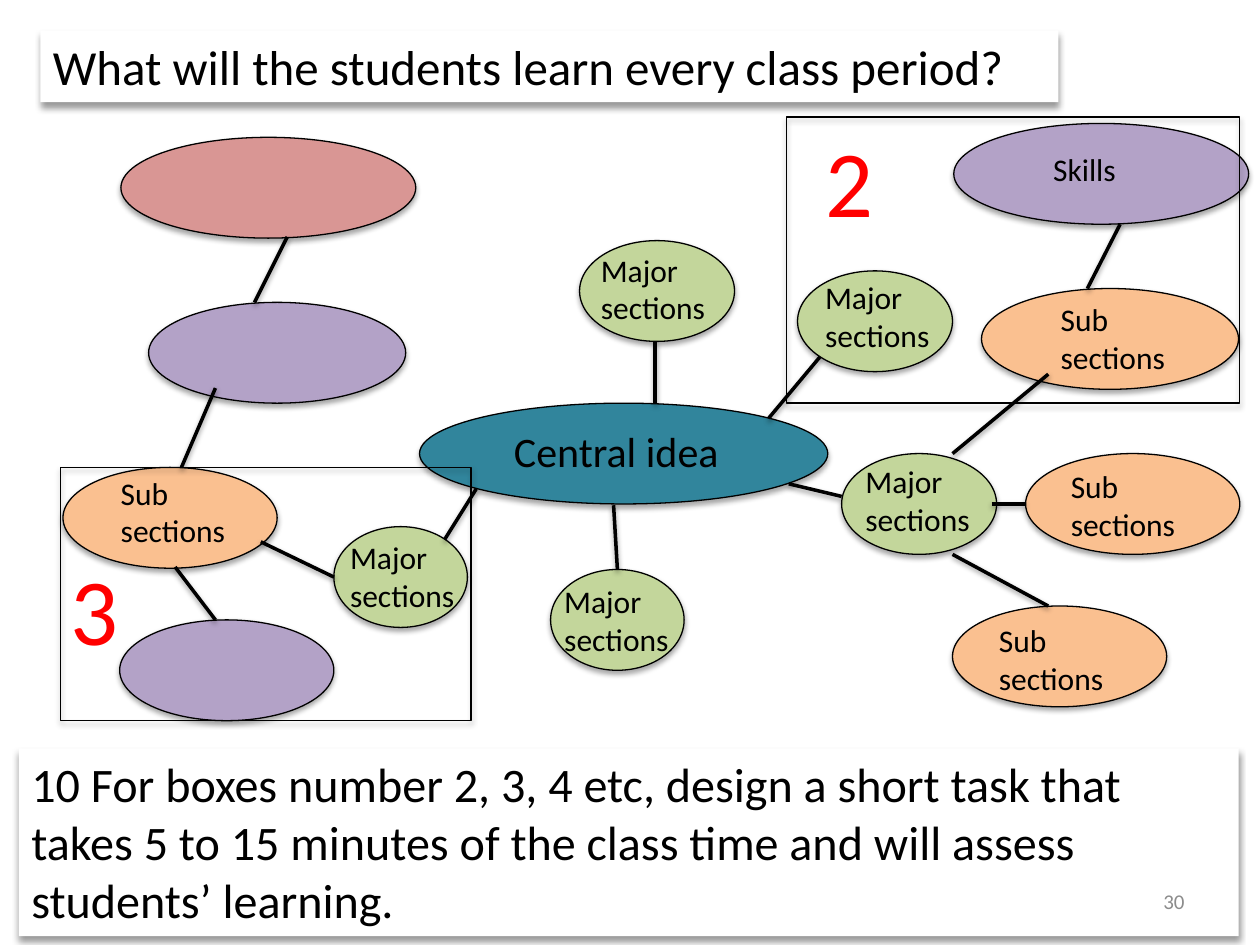
"""Build the concept map slide on what students learn every class period."""
from lxml import etree
from pptx import Presentation
from pptx.dml.color import RGBColor
from pptx.enum.shapes import MSO_CONNECTOR, MSO_SHAPE
from pptx.enum.text import MSO_ANCHOR, MSO_AUTO_SIZE, PP_ALIGN
from pptx.oxml.ns import qn
from pptx.util import Inches, Pt

OVAL, RECT = MSO_SHAPE.OVAL, MSO_SHAPE.RECTANGLE
LINE = MSO_CONNECTOR.STRAIGHT
TOP, MIDDLE = MSO_ANCHOR.TOP, MSO_ANCHOR.MIDDLE
LEFT, RIGHT = PP_ALIGN.LEFT, PP_ALIGN.RIGHT
FIXED = MSO_AUTO_SIZE.NONE

FONT = "Calibri"
COLORS = {
    "teal": "31859C", "green": "C3D69B", "orange": "FAC090",
    "purple": "B3A2C7", "rose": "D99694", "white": "FFFFFF",
    "black": "000000", "red": "FF0000", "gray": "8C8C8C",
}
# Shadows: opacity in percent, blur and distance in points.
SHADOWS = {"shape": (35, 3.1, 1.8), "panel": (40, 4, 3), "link": (38, 3.1, 1.6)}

TITLE = "What will the students learn every class period?"
NOTE = ("10 For boxes number 2, 3, 4 etc, design a short task that takes 5 to 15 "
        "minutes of the class time and will assess students’ learning.")
TITLE_AT = (0.32, 0.24, 8.08, 0.57)
NOTE_AT = (0.15, 5.94, 9.68, 1.49)

OVAL_H = 0.8
OVALS = {
    "teal": [(3.33, 3.2, 3.24)],
    "green": [(6.33, 2.15, 1.23), (6.68, 3.6, 1.23), (4.6, 1.91, 1.23),
              (4.37, 4.52, 1.06), (2.65, 4.18, 1.06)],
    "orange": [(8.14, 3.6, 1.7), (7.79, 2.29, 2.04), (7.56, 4.81, 1.7),
               (0.5, 3.71, 1.7)],
    "purple": [(7.57, 0.98, 2.34), (1.18, 2.4, 2.04), (0.95, 4.92, 1.7)],
    "rose": [(0.96, 1.09, 2.34)],
}
LINKS = [
    (6.1, 3.32, 6.51, 2.83), (7.87, 4, 8.14, 4), (7.56, 3.6, 8.32, 2.97),
    (7.56, 4.4, 8.32, 4.81), (8.89, 1.78, 8.63, 2.29), (3.53, 4.28, 3.78, 3.88),
    (4.87, 4.01, 4.9, 4.52), (1.44, 3.71, 1.71, 3.08), (1.39, 4.5, 1.71, 4.92),
    (2.28, 1.88, 2.02, 2.4), (6.26, 3.84, 6.68, 3.94), (5.2, 3.2, 5.2, 2.71),
    (2.07, 4.3, 2.65, 4.58),
]
LABEL_W = 1.06
LABELS = [
    (["Major sections"], 0.71, [(4.38, 4.57), (6.77, 3.62), (2.68, 4.22),
                                (6.45, 2.16), (4.67, 1.94)]),
    (["Sub", "sections"], 0.71, [(8.4, 3.66), (0.86, 3.71), (8.32, 2.33),
                                 (7.83, 4.88)]),
    (["Skills"], 0.4, [(8.26, 1.14)]),
]
FRAMES = [
    ((6.24, 0.93, 3.6, 2.27), "2", (6.45, 0.93, 0.8, 1.01)),
    ((0.48, 3.71, 3.26, 2.01), "3", (0.46, 4.32, 0.72, 1.01)),
]


def rgb(name):
    return RGBColor.from_string(COLORS[name])


def inches(spot):
    return [Inches(n) for n in spot]


def shade(item, kind):
    alpha, blur, dist = SHADOWS[kind]
    group = etree.SubElement(item._element.spPr, qn("a:effectLst"))
    drop = etree.SubElement(group, qn("a:outerShdw"), blurRad=str(Pt(blur)),
                            dist=str(Pt(dist)), dir="5400000", rotWithShape="0")
    tint = etree.SubElement(drop, qn("a:srgbClr"), val=COLORS["black"])
    etree.SubElement(tint, qn("a:alpha"), val=str(alpha * 1000))


def write(item, lines, size, color="black", align=LEFT, anchor=TOP):
    frame = item.text_frame
    frame.word_wrap = True
    frame.auto_size = FIXED
    frame.vertical_anchor = anchor
    for i, line in enumerate(lines):
        para = frame.add_paragraph() if i else frame.paragraphs[0]
        para.alignment = align
        run = para.add_run()
        run.text = line
        run.font.name = FONT
        run.font.size = Pt(size)
        run.font.color.rgb = rgb(color)


def label(slide, spot, *args, **style):
    write(slide.shapes.add_textbox(*inches(spot)), *args, **style)


def panel(item):
    item.fill.solid()
    item.fill.fore_color.rgb = rgb("white")
    item.line.fill.background()
    shade(item, "panel")


def outline(slide, kind, spot, fill=None):
    item = slide.shapes.add_shape(kind, *inches(spot))
    if fill:
        item.fill.solid()
        item.fill.fore_color.rgb = rgb(fill)
    else:
        item.fill.background()
    item.line.color.rgb = rgb("black")
    item.line.width = Pt(0.75)
    shade(item, "shape")


def link(slide, ends):
    item = slide.shapes.add_connector(LINE, *inches(ends))
    item.line.color.rgb = rgb("black")
    item.line.width = Pt(2)
    shade(item, "link")


def main():
    deck = Presentation()
    deck.slide_width, deck.slide_height = Inches(10), Inches(7.5)
    slide = deck.slides.add_slide(deck.slide_layouts[5])

    title = slide.shapes.title
    title.left, title.top, title.width, title.height = inches(TITLE_AT)
    panel(title)
    write(title, [TITLE], 28)
    note = slide.shapes.add_textbox(*inches(NOTE_AT))
    panel(note)
    write(note, [NOTE], 27.5)

    for fill, spots in OVALS.items():
        for spot in spots:
            outline(slide, OVAL, (*spot, OVAL_H), fill)
    for ends in LINKS:
        link(slide, ends)

    label(slide, (3.98, 3.33, 2.05, 0.5), ["Central idea"], 24)
    for lines, height, spots in LABELS:
        for spot in spots:
            label(slide, (*spot, LABEL_W, height), lines, 18)
    for spot, digit, place in FRAMES:
        outline(slide, RECT, spot)
        label(slide, place, [digit], 54, color="red")
    label(slide, (7.17, 6.95, 2.33, 0.4), ["30"], 12, color="gray",
          align=RIGHT, anchor=MIDDLE)
    deck.save("out.pptx")


if __name__ == "__main__":
    main()
